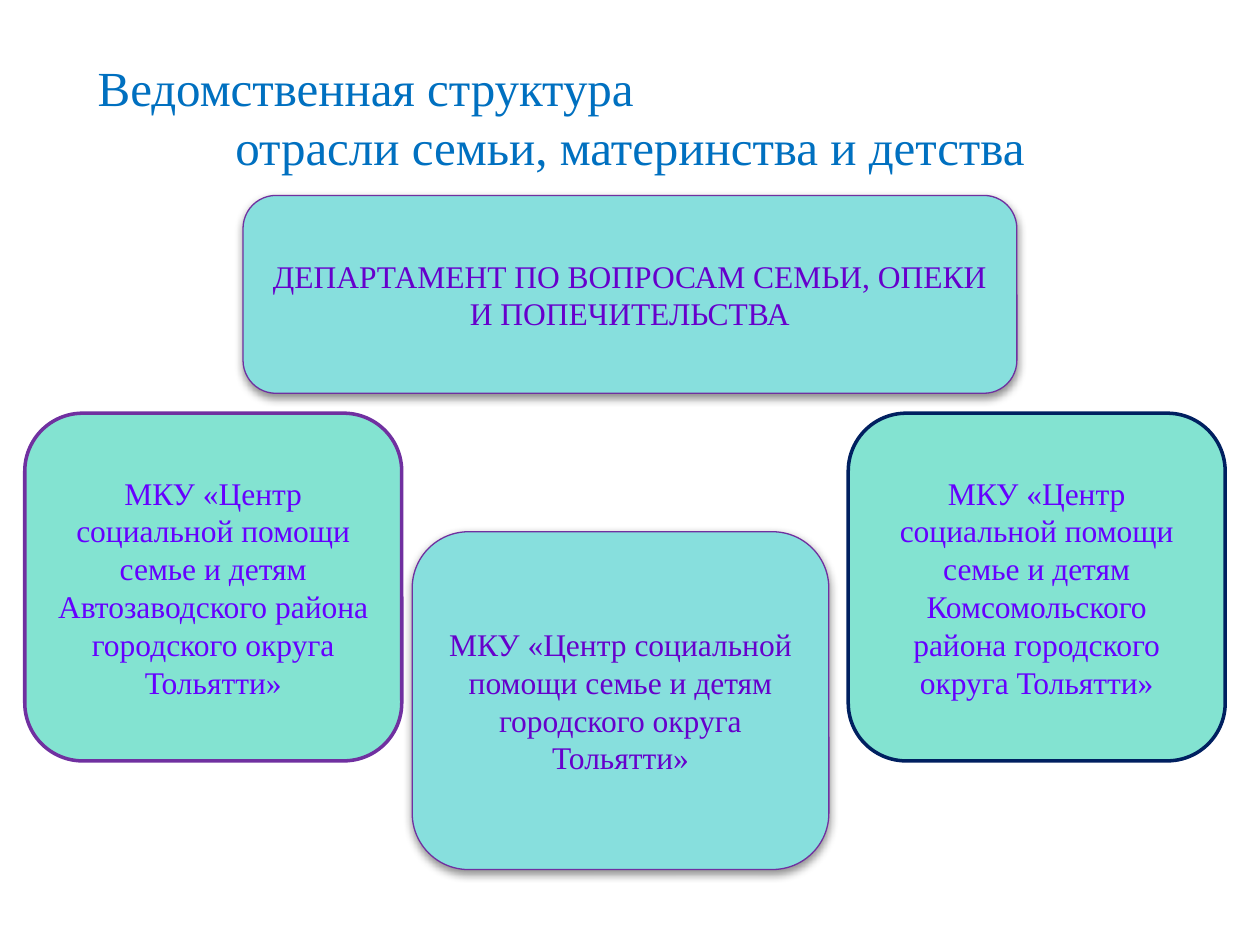
from dataclasses import dataclass

from pptx import Presentation
from pptx.dml.color import RGBColor
from pptx.enum.shapes import MSO_SHAPE as Shape
from pptx.enum.text import MSO_ANCHOR as Anchor, PP_ALIGN as Align
from pptx.oxml import parse_xml
from pptx.oxml.ns import nsdecls
from pptx.util import Cm, Pt

FONT = "Times New Roman"
BLUE = RGBColor(0x00, 0x70, 0xC0)
NAVY = RGBColor(0x00, 0x20, 0x60)
PURPLE = RGBColor(0x70, 0x30, 0xA0)
INDIGO = RGBColor(0x66, 0x00, 0xCC)
VIOLET = RGBColor(0x66, 0x00, 0xFF)
AQUA = RGBColor(0x87, 0xDF, 0xDD)
MINT = RGBColor(0x83, 0xE3, 0xD1)


@dataclass
class Style:
    fill: RGBColor
    ink: RGBColor
    width: float
    shadow: bool


@dataclass
class Box:
    left: float
    top: float
    width: float
    height: float
    text: str
    style: Style
    edge: RGBColor = PURPLE


MAIN = Style(AQUA, INDIGO, 0.75, True)
SIDE = Style(MINT, VIOLET, 2, False)


def center(name: str) -> str:
    return f"МКУ «Центр социальной помощи семье и детям {name}городского округа Тольятти»"


BOXES = [
    Box(8.31, 10.72, 8.4, 6.81, center(""), MAIN),
    Box(0.5, 8.33, 7.6, 7.01, center("Автозаводского района "), SIDE),
    Box(17.1, 8.33, 7.6, 7.01, center("Комсомольского района "), SIDE, NAVY),
    Box(4.9, 3.94, 15.6, 3.99,
        "ДЕПАРТАМЕНТ ПО ВОПРОСАМ СЕМЬИ, ОПЕКИ И ПОПЕЧИТЕЛЬСТВА", MAIN),
]


def add_run(par, text: str, size: float, ink: RGBColor) -> None:
    run = par.add_run()
    run.text = text
    run.font.name = FONT
    run.font.size = Pt(size)
    run.font.color.rgb = ink


def add_shadow(shape) -> None:
    effects = shape._element.spPr.find(
        "{http://schemas.openxmlformats.org/drawingml/2006/main}effectLst")
    effects.append(parse_xml(
        f'<a:outerShdw {nsdecls("a")} blurRad="{Pt(5)}" dist="{Pt(2)}" '
        'dir="5400000" rotWithShape="0"><a:srgbClr val="000000">'
        '<a:alpha val="43000"/></a:srgbClr></a:outerShdw>'))


def add_box(slide, box: Box) -> None:
    shape = slide.shapes.add_shape(
        Shape.ROUNDED_RECTANGLE,
        Cm(box.left), Cm(box.top), Cm(box.width), Cm(box.height))
    shape.fill.solid()
    shape.fill.fore_color.rgb = box.style.fill
    shape.line.color.rgb = box.edge
    shape.line.width = Pt(box.style.width)
    shape.shadow.inherit = False
    if box.style.shadow:
        add_shadow(shape)
    frame = shape.text_frame
    frame.word_wrap = True
    frame.vertical_anchor = Anchor.MIDDLE
    par = frame.paragraphs[0]
    par.alignment = Align.CENTER
    add_run(par, box.text, 18, box.style.ink)


def add_title(slide) -> None:
    frame = slide.shapes.add_textbox(
        Cm(1.27), Cm(0.76), Cm(22.86), Cm(3.18)).text_frame
    frame.word_wrap = True
    frame.vertical_anchor = Anchor.MIDDLE
    # The first line is set to the left, the second is centred
    first, second = frame.paragraphs[0], frame.add_paragraph()
    first.alignment = Align.LEFT
    first._p.get_or_add_pPr().set("marL", str(Cm(0.45)))
    second.alignment = Align.CENTER
    add_run(first, "Ведомственная структура", 28, BLUE)
    add_run(second, "отрасли семьи, материнства и детства", 28, BLUE)


def main() -> None:
    deck = Presentation()
    deck.slide_width, deck.slide_height = Cm(25.4), Cm(19.05)
    slide = deck.slides.add_slide(deck.slide_layouts[6])
    # Heading
    add_title(slide)
    # Department and its centres
    for box in BOXES:
        add_box(slide, box)
    deck.save("out.pptx")


if __name__ == "__main__":
    main()
